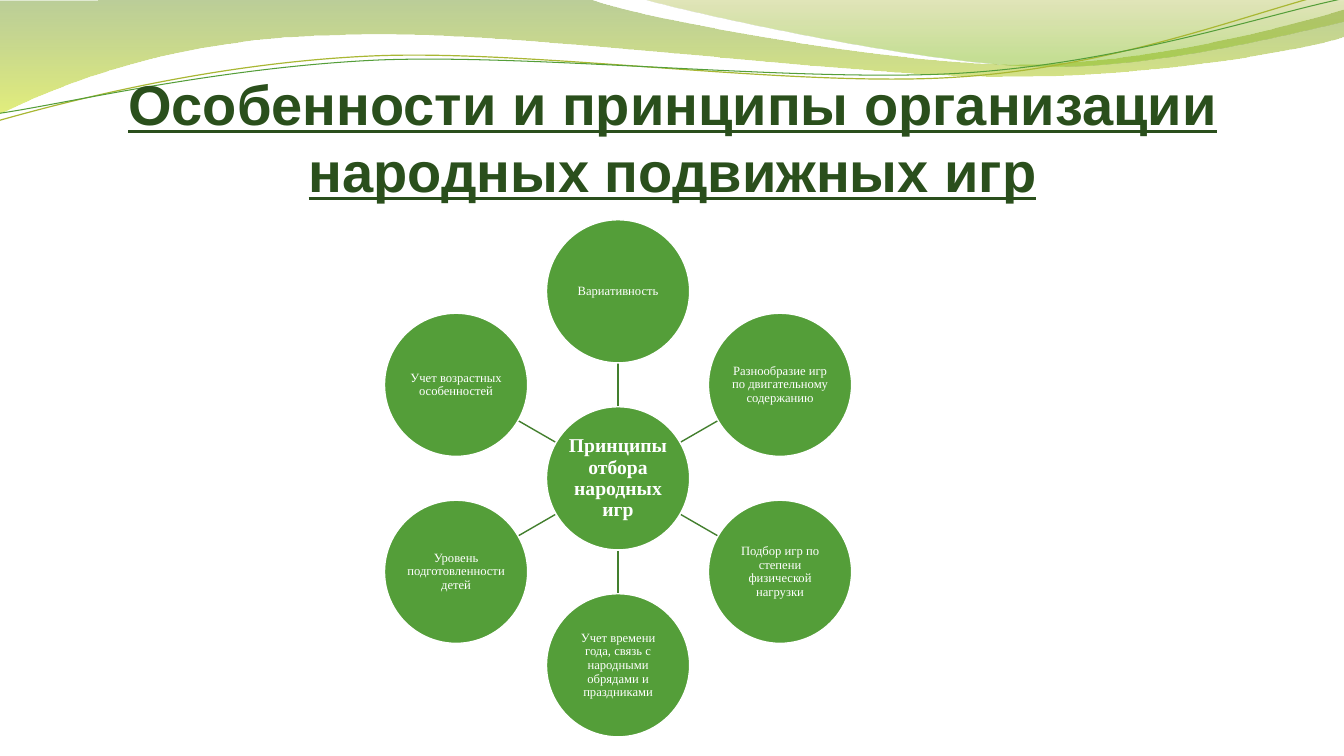
from dataclasses import dataclass
from math import cos, radians, sin

from lxml import etree
from pptx import Presentation
from pptx.dml.color import RGBColor
from pptx.enum.shapes import MSO_CONNECTOR, MSO_SHAPE
from pptx.enum.text import MSO_ANCHOR, PP_ALIGN
from pptx.oxml.ns import qn
from pptx.util import Emu, Inches, Pt

OVAL, LINE = MSO_SHAPE.OVAL, MSO_CONNECTOR.STRAIGHT
CENTER, MIDDLE, BOTTOM = PP_ALIGN.CENTER, MSO_ANCHOR.MIDDLE, MSO_ANCHOR.BOTTOM
COLS, ROWS = 1333, 750  # fine grid over the slide
DROP = 0.5  # rows by which the waves sit lower


@dataclass(frozen=True)
class Theme:
    title: str = "2A4F1C"
    disc: str = "549E39"
    spoke: str = "437F2E"
    white: str = "FFFFFF"
    olive: str = "A9B733"
    head: str = "Arial"
    body: str = "Times New Roman"
    big: int = 40
    mid: int = 14
    small: int = 9


# Each wave: start point, then line ends (2 numbers) or curves (6 numbers)
# Gradient stops: place, colour, opacity in percent
BANDS = [
    ([(0, 0), (587, -1), (634, 17, 884, 63, 1011, 63),
      (1137, 63, 1277, 26, 1333, 9), (1334, 36),
      (1311, 44, 1159, 76, 994, 75), (829, 75, 509, 28, 343, 34),
      (172, 36, 61, 83, -2, 113)],
     [(0, "69921C", 45), (1, "CCE10F", 55)]),
    ([(638, -1), (679, 11, 909, 62, 1025, 65),
      (1140, 69, 1282, 32, 1333, 21), (1333, 0)],
     [(0, "9BAA1A", 30), (0.8, "81BA16", 45)]),
]
THREADS = [
    ([(-1, 119), (63, 101, 210, 62, 369, 55), (527, 48, 789, 87, 949, 76),
      (1110, 66, 1251, 8, 1330, -10)], Theme.olive, 0.85),
    ([(-1, 112), (62, 103, 218, 66, 377, 59), (537, 53, 796, 82, 955, 72),
      (1114, 62, 1255, 14, 1333, -2)], Theme.disc, 0.75),
]

TITLE = "Особенности и принципы организации народных подвижных игр"
HUB = "Принципы отбора народных игр"
RULES = [  # clockwise from the top
    "Вариативность",
    "Разнообразие игр по двигательному содержанию",
    "Подбор игр по степени физической нагрузки",
    "Учет времени года, связь с народными обрядами и праздниками",
    "Уровень подготовленности детей",
    "Учет возрастных особенностей",
]
MID_X, MID_Y = 613, 474.5  # centre of the diagram
DISC, RING, GAP = 71, 185.5, 1  # disc radius, ring radius, gap at the hub


def rgb(code):
    return RGBColor.from_string(code)


def polar(angle, dist):
    turn = radians(angle)
    return MID_X + dist * sin(turn), MID_Y - dist * cos(turn)


def bend(shape, steps):
    """Join each three lines that stand for a curve into one Bezier."""
    lines = list(shape.element.spPr.iter(qn("a:lnTo")))
    for step in steps[1:]:
        used = lines[:len(step) // 2]
        lines = lines[len(used):]
        if len(used) == 3:
            curve = etree.Element(qn("a:cubicBezTo"))
            used[0].addprevious(curve)
            for part in used:
                curve.append(part[0])
                part.getparent().remove(part)


def write(shape, text, size, font, color, bold=False, under=False,
          anchor=MIDDLE, space=None, top=0):
    frame = shape.text_frame
    frame.word_wrap = True
    frame.vertical_anchor = anchor
    frame.margin_left = frame.margin_right = frame.margin_bottom = 0
    frame.margin_top = top
    par = frame.paragraphs[0]
    par.alignment = CENTER
    par.line_spacing = space
    run = par.add_run()
    run.text = text
    face = run.font
    face.size, face.name, face.bold, face.underline = Pt(size), font, bold, under
    face.color.rgb = rgb(color)


class Deck:
    def __init__(self, theme):
        self.theme = theme
        self.prs = Presentation()
        self.prs.slide_width, self.prs.slide_height = Inches(13.33), Inches(7.5)
        self.slide = self.prs.slides.add_slide(self.prs.slide_layouts[6])
        self.shapes = self.slide.shapes

    def x(self, cols):
        return Emu(round(self.prs.slide_width * cols / COLS))

    def y(self, rows):
        return Emu(round(self.prs.slide_height * rows / ROWS))

    def wave(self, steps, close):
        pts = [(self.x(a), self.y(b + DROP))
               for step in steps for a, b in zip(step[::2], step[1::2])]
        form = self.shapes.build_freeform(*pts[0])
        form.add_line_segments(pts[1:], close=close)
        shape = form.convert_to_shape()
        shape.shadow.inherit = False
        bend(shape, steps)
        return shape

    def band(self, steps, stops):
        shape = self.wave(steps, True)
        shape.line.fill.background()
        shape.fill.gradient()
        shape.fill.gradient_angle = 270
        for stop, (place, color, _) in zip(shape.fill.gradient_stops, stops):
            stop.position = place
            stop.color.rgb = rgb(color)
        tints = list(shape.element.spPr.iter(qn("a:srgbClr")))
        for tint, (_, _, alpha) in zip(tints, stops):
            etree.SubElement(tint, qn("a:alpha")).set("val", str(alpha * 1000))

    def thread(self, steps, color, width):
        shape = self.wave(steps, False)
        shape.fill.background()
        shape.line.color.rgb = rgb(color)
        shape.line.width = Pt(width)

    def title(self, text, x, y, w, h):
        box = self.shapes.add_textbox(self.x(x), self.y(y), self.x(w), self.y(h))
        look = self.theme
        write(box, text, look.big, look.head, look.title, bold=True,
              under=True, anchor=BOTTOM, top=self.y(5))

    def disc(self, text, x, y, size, bold=False):
        look = self.theme
        shape = self.shapes.add_shape(OVAL, self.x(x - DISC), self.y(y - DISC),
                                      self.x(2 * DISC), self.y(2 * DISC))
        shape.shadow.inherit = False
        shape.fill.solid()
        shape.fill.fore_color.rgb = rgb(look.disc)
        shape.line.color.rgb = rgb(look.white)
        shape.line.width = Pt(1)
        write(shape, text, size, look.body, look.white, bold=bold, space=0.9)

    def spoke(self, start, end):
        line = self.shapes.add_connector(LINE, self.x(start[0]), self.y(start[1]),
                                         self.x(end[0]), self.y(end[1]))
        line.line.color.rgb = rgb(self.theme.spoke)
        line.line.width = Pt(1)
        etree.SubElement(line.element.spPr, qn("a:effectLst"))


def main():
    look = Theme()
    deck = Deck(look)

    # Waves along the top
    for steps, stops in BANDS:
        deck.band(steps, stops)
    for steps, color, width in THREADS:
        deck.thread(steps, color, width)

    # Heading
    deck.title(TITLE, 67, 77, 1200, 125)

    # Hub with its ring of rules
    deck.disc(HUB, MID_X, MID_Y, look.mid, bold=True)
    for i, rule in enumerate(RULES):
        angle = i * 360 / len(RULES)
        deck.spoke(polar(angle, DISC + GAP), polar(angle, RING - DISC))
        deck.disc(rule, *polar(angle, RING), look.small)

    deck.prs.save("out.pptx")


if __name__ == "__main__":
    main()
